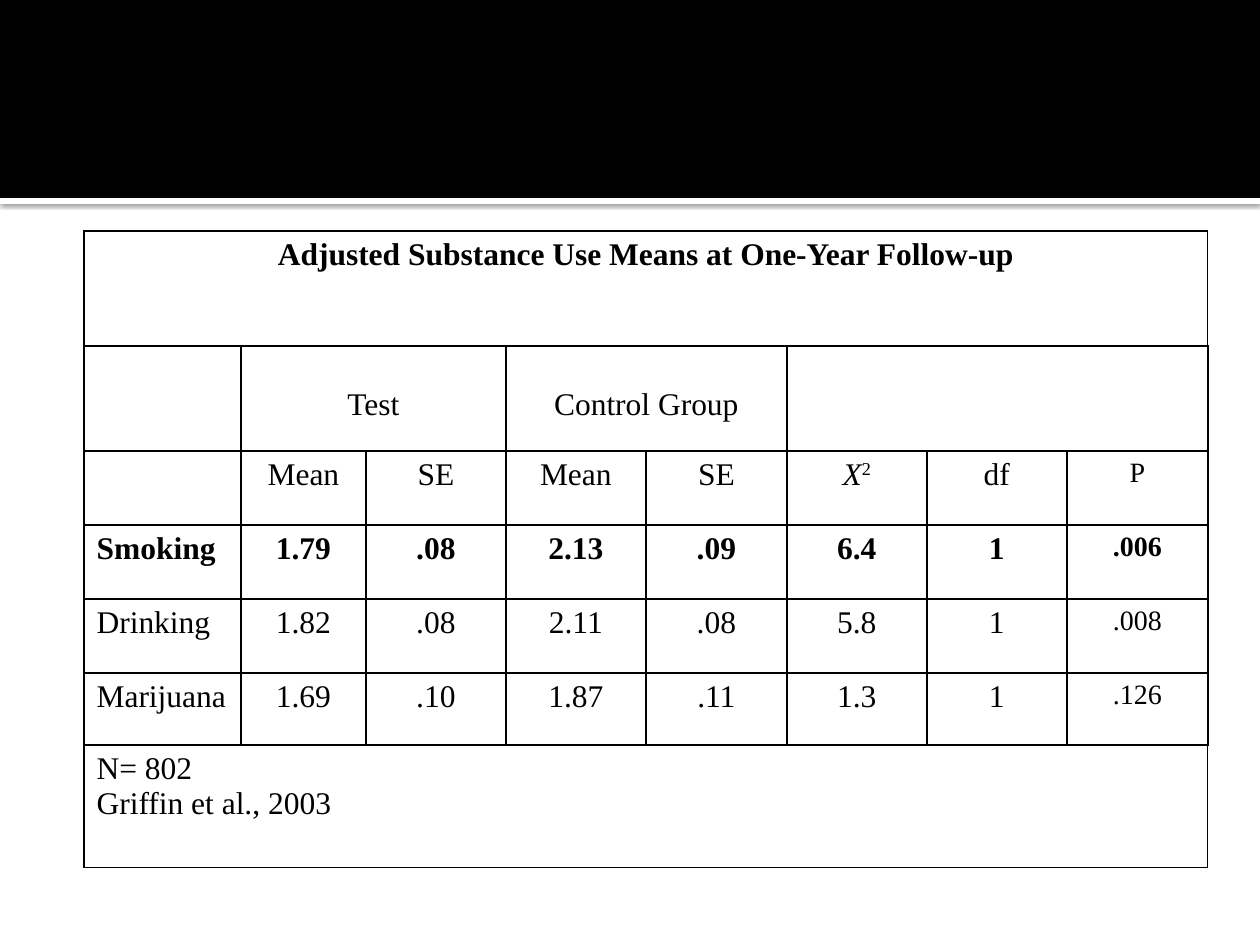
import lxml.etree
import pptx
import pptx.dml.color
import pptx.enum.shapes
import pptx.enum.text
import pptx.oxml
import pptx.oxml.ns
import pptx.util

SCALE = 914400 / 126
FONT = "Times New Roman"
BLACK = "000000"
WHITE = "FFFFFF"
COLUMNS = [157, 125] + [140, 140, 141] * 2
ROWS = [115, 105, 74, 74, 74, 72, 123]
LAST = len(COLUMNS) - 1
BOTTOM = len(ROWS) - 1
TITLE = "Adjusted Substance Use Means at One-Year Follow-up"
GROUPS = [("Test", 1, 2), ("Control Group", 3, 4), ("", 5, LAST)]
HEADINGS = ["", "Mean", "SE", "Mean", "SE", "X", "df", "P"]
RESULTS = [
    ["Smoking", "1.79", ".08", "2.13", ".09", "6.4", "1", ".006"],
    ["Drinking", "1.82", ".08", "2.11", ".08", "5.8", "1", ".008"],
    ["Marijuana", "1.69", ".10", "1.87", ".11", "1.3", "1", ".126"],
]
NOTES = ["N= 802", "Griffin et al., 2003"]


def px(n):
    return pptx.util.Emu(round(n * SCALE))


def rgb(value):
    return pptx.dml.color.RGBColor.from_string(value)


def apply(target, values):
    for name, value in values.items():
        setattr(target, name, value)


def add_band(s, top, height, color):
    sp = s.shapes.add_shape(
        pptx.enum.shapes.MSO_SHAPE.RECTANGLE, 0, px(top), px(1260), px(height))
    sp.shadow.inherit = False
    sp.fill.solid()
    sp.fill.fore_color.rgb = rgb(color)
    sp.line.fill.background()
    return sp


def add_shadow(sp):
    effects = sp._element.spPr.find(pptx.oxml.ns.qn("a:effectLst"))
    effects.append(pptx.oxml.parse_xml(
        f'<a:outerShdw {pptx.oxml.ns.nsdecls("a")} blurRad="31750" dist="10160" '
        f'dir="5400000" rotWithShape="0"><a:srgbClr val="{BLACK}">'
        '<a:alpha val="60000"/></a:srgbClr></a:outerShdw>'))


def add_run(p, text, size=18, **style):
    r = p.add_run()
    r.text = text
    apply(r.font, {"name": FONT, "size": pptx.util.Pt(size), **style})
    r.font.color.rgb = rgb(BLACK)
    return r


def write_cell(cell, lines, centered=True, **style):
    tf = cell.text_frame
    for i, text in enumerate(lines):
        p = tf.add_paragraph() if i else tf.paragraphs[0]
        if centered:
            p.alignment = pptx.enum.text.PP_ALIGN.CENTER
        if text:
            add_run(p, text, **style)


def set_borders(cell, widths):
    tcPr = cell._tc.get_or_add_tcPr()
    for side in "LRTB":
        tcPr.append(pptx.oxml.parse_xml(
            f'<a:ln{side} {pptx.oxml.ns.nsdecls("a")} w="{round(widths[side] * 12700)}">'
            f'<a:solidFill><a:srgbClr val="{BLACK}"/></a:solidFill></a:ln{side}>'))


def add_grid(s):
    table = s.shapes.add_table(
        len(ROWS), len(COLUMNS), px(84), px(231), px(sum(COLUMNS)), px(sum(ROWS))).table
    apply(table, {"first_row": False, "horz_banding": False})
    for column, width in zip(table.columns, COLUMNS):
        column.width = px(width)
    for row, height in zip(table.rows, ROWS):
        row.height = px(height)
    for i in range(len(ROWS)):
        outer = 0.75 if i in (0, BOTTOM) else 1
        widths = {"L": outer, "R": outer,
                  "T": 0.75 if i == 0 else 1, "B": 0.75 if i == BOTTOM else 1}
        for j in range(len(COLUMNS)):
            cell = table.cell(i, j)
            set_borders(cell, widths)
            cell.fill.background()
    return table


def fill_headings(table):
    table.cell(0, 0).merge(table.cell(0, LAST))
    write_cell(table.cell(0, 0), [TITLE], bold=True)
    for text, first, last in GROUPS:
        cell = table.cell(1, first)
        cell.merge(table.cell(1, last))
        cell.margin_top = px(41)
        write_cell(cell, [text])


def fill_values(table):
    for i, values in enumerate([HEADINGS] + RESULTS, 2):
        for j, text in enumerate(values):
            write_cell(table.cell(i, j), [text], centered=j > 0,
                       size=16 if j == LAST else 18, bold=values[0] == "Smoking")
    p = table.cell(2, HEADINGS.index("X")).text_frame.paragraphs[0]
    p.runs[0].font.italic = True
    add_run(p, "2").font._element.set("baseline", "30000")


def fill_notes(table):
    table.cell(BOTTOM, 0).merge(table.cell(BOTTOM, LAST))
    write_cell(table.cell(BOTTOM, 0), NOTES, centered=False)


def main():
    prs = pptx.Presentation()
    apply(prs, {"slide_width": px(1260), "slide_height": px(945)})
    s = prs.slides.add_slide(prs.slide_layouts[6])
    add_shadow(add_band(s, 198, 6, WHITE))
    add_band(s, 0, 198, BLACK)
    table = add_grid(s)
    fill_headings(table)
    fill_values(table)
    fill_notes(table)
    prs.save("out.pptx")


if __name__ == "__main__":
    main()
